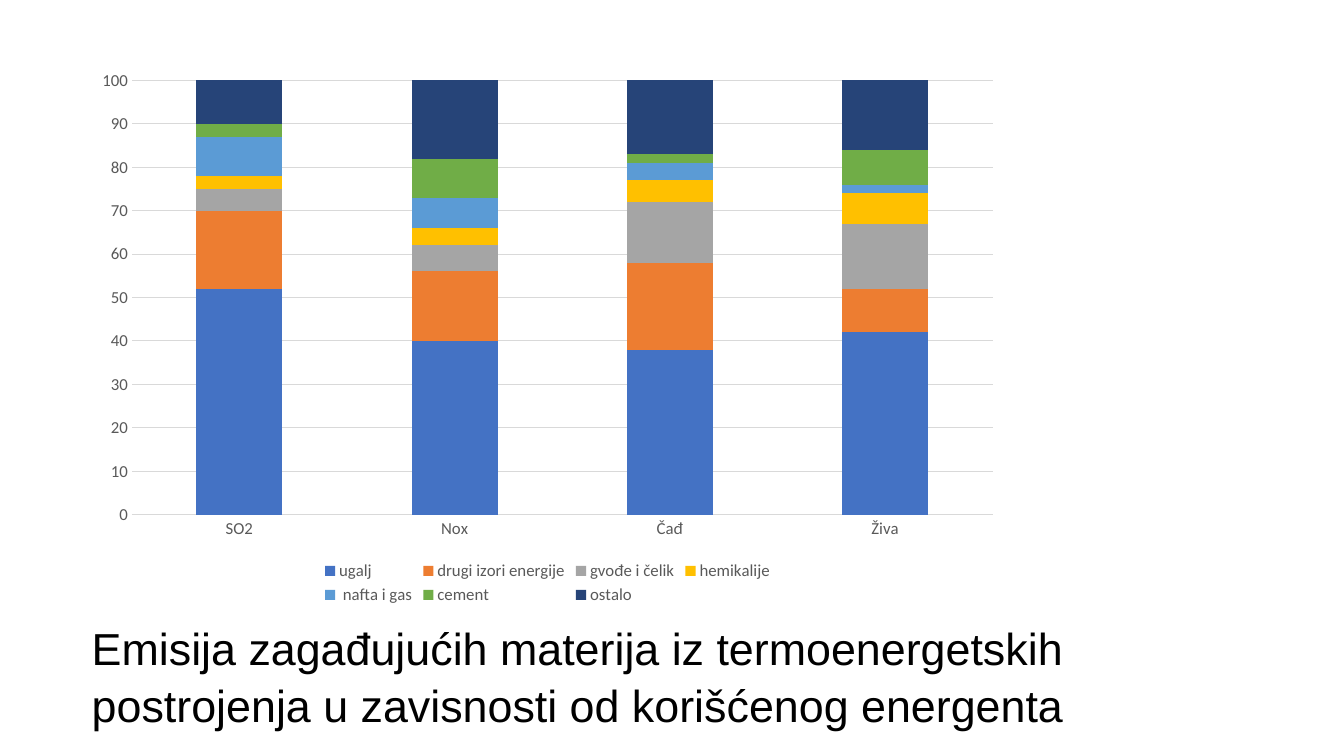
from dataclasses import dataclass

from pptx import Presentation
from pptx.chart.data import CategoryChartData
from pptx.dml.color import RGBColor
from pptx.enum.chart import XL_CHART_TYPE, XL_LEGEND_POSITION, XL_TICK_MARK
from pptx.enum.text import MSO_ANCHOR, MSO_AUTO_SIZE, PP_ALIGN
from pptx.util import Inches, Pt


@dataclass(frozen=True)
class Theme:
    title_font: str = "Arial"
    chart_font: str = "Calibri"
    title_size: int = 32
    label_size: int = 12
    title_color: str = "000000"
    label_color: str = "595959"
    grid_color: str = "D9D9D9"
    background: str = "FFFFFF"


THEME = Theme()
POLLUTANTS = ["SO2", "Nox", "Čađ", "Živa"]
SOURCES = [
    ("ugalj", (52, 40, 38, 42), "4472C4"),
    ("drugi izori energije", (18, 16, 20, 10), "ED7D31"),
    ("gvođe i čelik", (5, 6, 14, 15), "A5A5A5"),
    ("hemikalije", (3, 4, 5, 7), "FFC000"),
    (" nafta i gas", (9, 7, 4, 2), "5B9BD5"),
    ("cement", (3, 9, 2, 8), "70AD47"),
    ("ostalo", (10, 18, 17, 16), "264478"),
]
TITLE = (
    "Emisija zagađujućih materija iz termoenergetskih "
    "postrojenja u zavisnosti od korišćenog energenta"
)


def style_font(font, name, size, color):
    font.name = name
    font.size = Pt(size)
    font.color.rgb = RGBColor.from_string(color)


def style_line(line):
    line.color.rgb = RGBColor.from_string(THEME.grid_color)
    line.width = Pt(0.75)


def style_axis(axis):
    axis.major_tick_mark = axis.minor_tick_mark = XL_TICK_MARK.NONE
    style_font(axis.tick_labels.font, THEME.chart_font, THEME.label_size, THEME.label_color)


def add_emission_chart(slide):
    emissions = CategoryChartData()
    emissions.categories = POLLUTANTS
    for name, shares, _ in SOURCES:
        emissions.add_series(name, shares)
    chart = slide.shapes.add_chart(
        XL_CHART_TYPE.COLUMN_STACKED,
        Inches(0.83), Inches(0.59), Inches(9.2), Inches(5.45),
        emissions,
    ).chart
    chart.has_title = False
    style_font(chart.font, THEME.chart_font, THEME.label_size, THEME.label_color)

    columns = chart.plots[0]
    columns.gap_width = 150
    columns.overlap = 100
    columns.vary_by_categories = False
    for series, (_, _, color) in zip(columns.series, SOURCES):
        series.format.fill.solid()
        series.format.fill.fore_color.rgb = RGBColor.from_string(color)

    style_axis(chart.category_axis)
    style_line(chart.category_axis.format.line)

    shares_axis = chart.value_axis
    style_axis(shares_axis)
    shares_axis.minimum_scale = 0
    shares_axis.maximum_scale = 100
    shares_axis.major_unit = 10
    shares_axis.format.line.fill.background()
    style_line(shares_axis.major_gridlines.format.line)

    chart.has_legend = True
    chart.legend.position = XL_LEGEND_POSITION.BOTTOM
    chart.legend.include_in_layout = False
    style_font(chart.legend.font, THEME.chart_font, THEME.label_size, THEME.label_color)


def place_title(slide):
    title = slide.shapes.title
    title.left, title.top = Inches(0.81), Inches(6.08)
    title.width, title.height = Inches(9.96), Inches(1.18)
    frame = title.text_frame
    frame.word_wrap = True
    frame.auto_size = MSO_AUTO_SIZE.NONE
    frame.vertical_anchor = MSO_ANCHOR.TOP
    paragraph = frame.paragraphs[0]
    paragraph.alignment = PP_ALIGN.LEFT
    paragraph.line_spacing = 1.06
    run = paragraph.add_run()
    run.text = TITLE
    style_font(run.font, THEME.title_font, THEME.title_size, THEME.title_color)


def main():
    deck = Presentation()
    deck.slide_width, deck.slide_height = Inches(13.33), Inches(7.5)
    title_only = deck.slide_layouts[5]
    slide = deck.slides.add_slide(title_only)
    slide.background.fill.solid()
    slide.background.fill.fore_color.rgb = RGBColor.from_string(THEME.background)
    add_emission_chart(slide)
    place_title(slide)
    deck.save("out.pptx")


if __name__ == "__main__":
    main()
